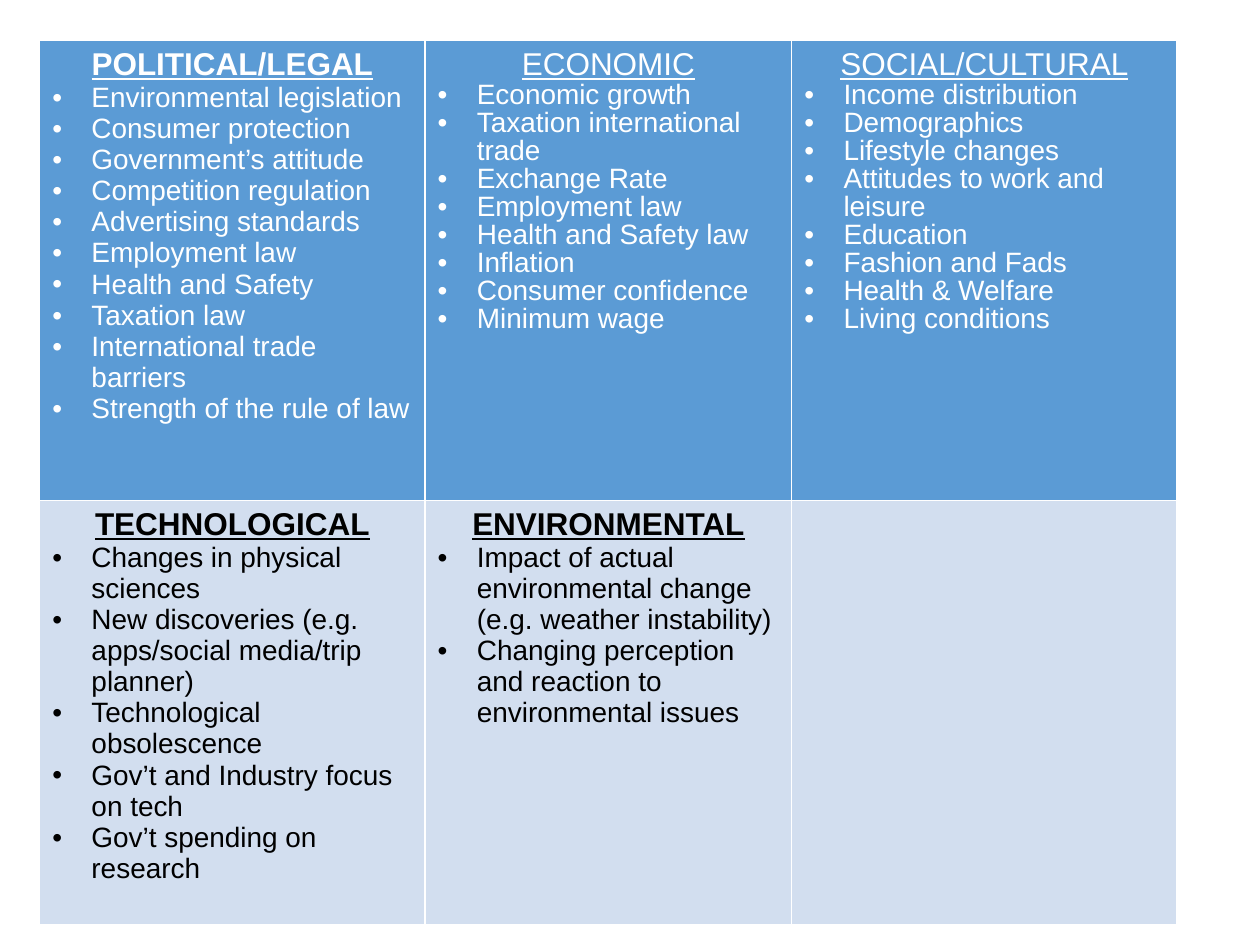
import pptx
import pptx.dml.color
import pptx.enum.text
import pptx.oxml.ns
import pptx.util
from lxml import etree

Cm = pptx.util.Cm
Pt = pptx.util.Pt
RGBColor = pptx.dml.color.RGBColor
PP_ALIGN = pptx.enum.text.PP_ALIGN
qn = pptx.oxml.ns.qn

WHITE = RGBColor(0xFF, 0xFF, 0xFF)
BLACK = RGBColor(0x00, 0x00, 0x00)
BLUE = RGBColor(0x5B, 0x9B, 0xD5)
PALE_BLUE = RGBColor(0xD2, 0xDE, 0xEF)
INDENT = Cm(0.79)


def add_text(p, text, size=16, color=BLACK, bold=False, underline=False,
             align=PP_ALIGN.LEFT, spacing=1.0, bullet=False):
    if bullet:
        pPr = p._p.get_or_add_pPr()
        pPr.set("marL", str(INDENT))
        pPr.set("indent", str(-INDENT))
        etree.SubElement(pPr, qn("a:buFont")).set("typeface", "Arial")
        etree.SubElement(pPr, qn("a:buChar")).set("char", "•")
    p.alignment = align
    p.line_spacing = spacing
    r = p.add_run()
    r.text = text
    r.font.name = "Arial"
    r.font.size = Pt(size)
    r.font.bold = bold
    r.font.underline = underline
    r.font.color.rgb = color


def set_borders(cell, color, width):
    tcPr = cell._tc.get_or_add_tcPr()
    for side in ("a:lnL", "a:lnR", "a:lnT", "a:lnB"):
        ln = etree.SubElement(tcPr, qn(side))
        ln.set("w", str(width))
        fill = etree.SubElement(ln, qn("a:solidFill"))
        etree.SubElement(fill, qn("a:srgbClr")).set("val", str(color))


# Each factor: heading, bold heading, bullet line spacing, bullets
FACTORS = [
    [
        ("POLITICAL/LEGAL", True, 1.0, [
            "Environmental legislation", "Consumer protection",
            "Government’s attitude", "Competition regulation",
            "Advertising standards", "Employment law", "Health and Safety",
            "Taxation law", "International trade barriers",
            "Strength of the rule of law"]),
        ("ECONOMIC", False, 0.9, [
            "Economic growth", "Taxation international trade",
            "Exchange Rate", "Employment law", "Health and Safety law",
            "Inflation", "Consumer confidence", "Minimum wage"]),
        ("SOCIAL/CULTURAL", False, 0.9, [
            "Income distribution", "Demographics", "Lifestyle changes",
            "Attitudes to work and leisure", "Education",
            "Fashion and Fads", "Health & Welfare", "Living conditions"]),
    ],
    [
        ("TECHNOLOGICAL", True, 1.0, [
            "Changes in physical sciences",
            "New discoveries (e.g. apps/social media/trip planner)",
            "Technological obsolescence", "Gov’t and Industry focus on tech",
            "Gov’t spending on research"]),
        ("ENVIRONMENTAL", True, 1.0, [
            "Impact of actual environmental change (e.g. weather instability)",
            "Changing perception and reaction to environmental issues"]),
        None,
    ],
]
ROW_COLORS = [(BLUE, WHITE), (PALE_BLUE, BLACK)]
COL_WIDTHS = [Cm(7.77), Cm(7.39), Cm(7.77)]
ROW_HEIGHTS = [Cm(9.27), Cm(8.56)]

# Slide
prs = pptx.Presentation()
prs.slide_width, prs.slide_height = Cm(25.4), Cm(19.05)
s = prs.slides.add_slide(prs.slide_layouts[6])

# Table grid
table = s.shapes.add_table(2, 3, Cm(0.8), Cm(0.82),
                           sum(COL_WIDTHS), sum(ROW_HEIGHTS)).table
table.horz_banding = False
for col, width in zip(table.columns, COL_WIDTHS):
    col.width = width
for row, height in zip(table.rows, ROW_HEIGHTS):
    row.height = height

# Cells
for row, factors, (fill, color) in zip(table.rows, FACTORS, ROW_COLORS):
    for cell, factor in zip(row.cells, factors):
        set_borders(cell, WHITE, Pt(1))
        cell.fill.solid()
        cell.fill.fore_color.rgb = fill
        if factor is None:
            continue
        heading, bold, spacing, bullets = factor
        tf = cell.text_frame
        add_text(tf.paragraphs[0], heading, size=18, color=color, bold=bold,
                 underline=True, align=PP_ALIGN.CENTER)
        for text in bullets:
            add_text(tf.add_paragraph(), text, color=color, spacing=spacing,
                     bullet=True)

prs.save("out.pptx")
